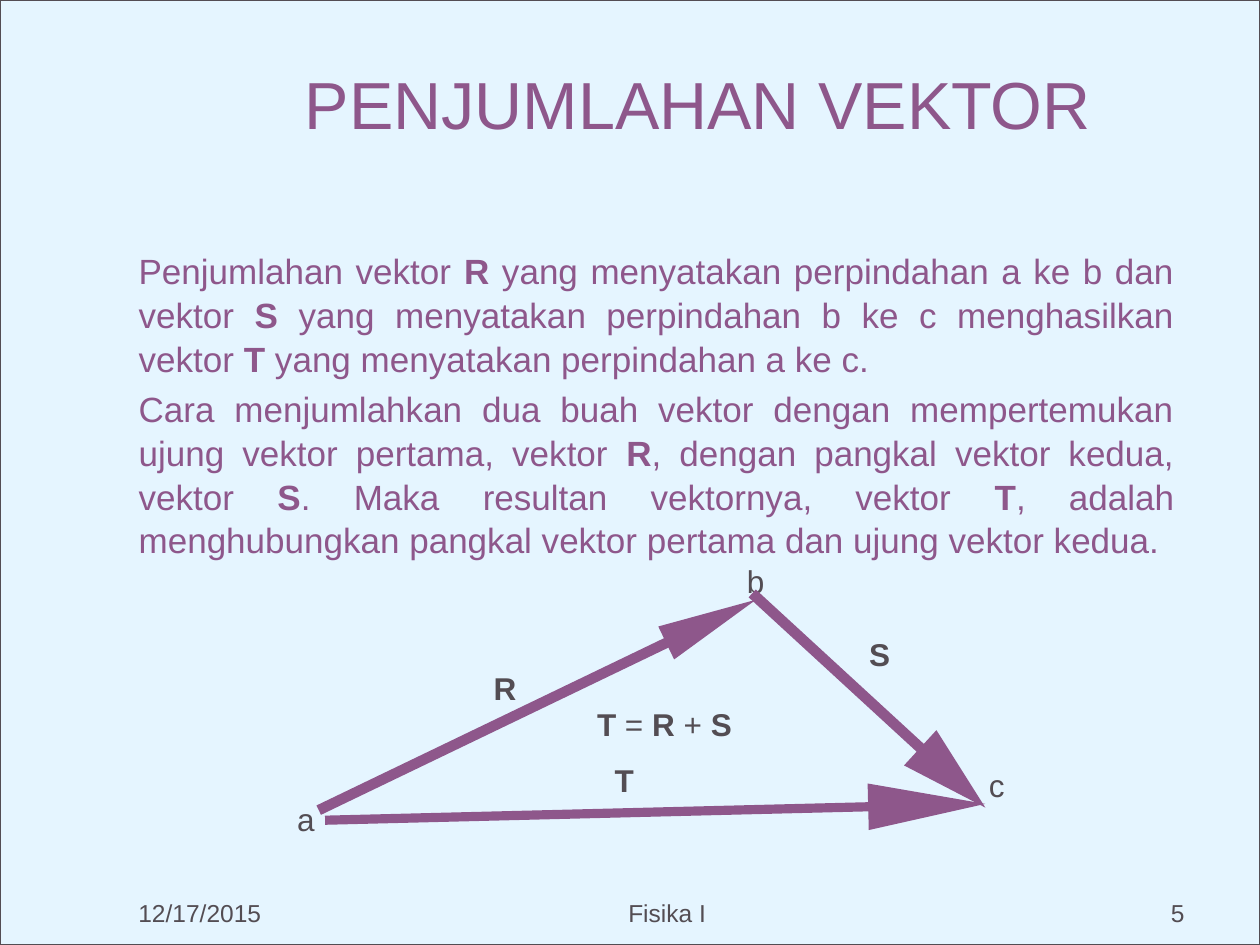
from math import atan2, degrees, hypot

from lxml.etree import SubElement
from pptx import Presentation
from pptx.dml.color import RGBColor
from pptx.enum.shapes import MSO_SHAPE
from pptx.enum.text import MSO_ANCHOR, MSO_AUTO_SIZE, PP_ALIGN
from pptx.oxml.ns import qn
from pptx.util import Inches, Pt


class Theme:
    font = "Arial"
    paper = RGBColor(0xE5, 0xF5, 0xFF)
    ink = RGBColor(0x53, 0x4D, 0x53)
    accent = RGBColor(0x8E, 0x57, 0x8B)
    title, body, label, footer = 38, 20, 18, 14


# Content: a run is (text, bold)
TITLE = [[("PENJUMLAHAN VEKTOR", False)]]
BODY = [
    [("Penjumlahan vektor ", False), ("R", True),
     (" yang menyatakan perpindahan a ke b dan vektor ", False), ("S", True),
     (" yang menyatakan perpindahan b ke c menghasilkan vektor ", False), ("T", True),
     (" yang menyatakan perpindahan a ke c.", False)],
    [("Cara menjumlahkan dua buah vektor dengan mempertemukan ujung vektor pertama, vektor ", False),
     ("R", True), (", dengan pangkal vektor kedua, vektor ", False), ("S", True),
     (". Maka resultan vektornya, vektor ", False), ("T", True),
     (", adalah menghubungkan pangkal vektor pertama dan ujung vektor kedua.", False)],
]
FOOTERS = [  # text, left, width, alignment
    ("12/17/2015", 1, 2.17, PP_ALIGN.LEFT),
    ("Fisika I", 3.67, 3.25, PP_ALIGN.CENTER),
    ("5", 7.42, 2.08, PP_ALIGN.RIGHT),
]
LABELS = [  # runs, left, top, width
    ([("b", False)], 5.83, 4.41, 0.53),
    ([("c", False)], 7.75, 6.03, 0.75),
    ([("a", False)], 2.26, 6.3, 0.59),
    ([("R", True)], 3.82, 5.26, 0.52),
    ([("S", True)], 6.8, 4.99, 0.52),
    ([("T", True)], 4.78, 5.99, 0.52),
    ([("T", True), (" = ", False), ("R", True), (" + ", False), ("S", True)], 4.64, 5.55, 1.84),
]
VECTORS = [  # tail, head, head width, shaft share, head length share
    ((2.53, 6.43), (6.0, 4.76), 0.29, 0.285, 2.724),
    ((5.97, 4.71), (7.82, 6.41), 0.38, 0.222, 1.846),
    ((2.58, 6.51), (7.82, 6.38), 0.37, 0.196, 2.512),
]


def place(shape, left, top, width, height):
    shape.left, shape.top = Inches(left), Inches(top)
    shape.width, shape.height = Inches(width), Inches(height)


def write(shape, paragraphs, size, color, align=PP_ALIGN.LEFT, spacing=1.0, plain=False):
    frame = shape.text_frame
    frame.word_wrap = True
    frame.auto_size = MSO_AUTO_SIZE.NONE
    for index, runs in enumerate(paragraphs):
        para = frame.paragraphs[0] if index == 0 else frame.add_paragraph()
        if plain:  # no bullet, no hanging indent
            properties = para._p.get_or_add_pPr()
            properties.set("marL", "0")
            properties.set("indent", "0")
            SubElement(properties, qn("a:buNone"))
        para.alignment = align
        para.line_spacing = spacing
        para.space_before = Pt(0.2 * size if index else 0)
        for text, bold in runs:
            span = para.add_run()
            span.text = text
            span.font.name = Theme.font
            span.font.size = Pt(size)
            span.font.bold = bold
            span.font.color.rgb = color


def add_text(page, runs, left, top, width, height, size, align=PP_ALIGN.LEFT):
    box = page.shapes.add_textbox(Inches(left), Inches(top), Inches(width), Inches(height))
    write(box, [runs], size, Theme.ink, align)


def add_vector(page, tail, head, thickness, shaft, point):
    run, rise = head[0] - tail[0], head[1] - tail[1]
    length = hypot(run, rise)
    left = (tail[0] + head[0] - length) / 2
    top = (tail[1] + head[1] - thickness) / 2
    arrow = page.shapes.add_shape(MSO_SHAPE.RIGHT_ARROW, Inches(left), Inches(top),
                                  Inches(length), Inches(thickness))
    arrow.rotation = degrees(atan2(rise, run)) % 360
    arrow.adjustments[0], arrow.adjustments[1] = shaft, point
    arrow.shadow.inherit = False
    arrow.fill.solid()
    arrow.fill.fore_color.rgb = Theme.accent
    arrow.line.fill.background()


def main():
    deck = Presentation()
    deck.slide_width, deck.slide_height = Inches(10), Inches(7.5)
    page = deck.slides.add_slide(deck.slide_layouts[1])

    # Framed backdrop, sent behind the placeholders
    backdrop = page.shapes.add_shape(MSO_SHAPE.RECTANGLE, 0, 0, deck.slide_width, deck.slide_height)
    backdrop.shadow.inherit = False
    backdrop.fill.solid()
    backdrop.fill.fore_color.rgb = Theme.paper
    backdrop.line.color.rgb = Theme.ink
    backdrop.line.width = Pt(0.75)
    page.shapes._spTree.insert(2, backdrop._element)

    # Title and body
    title, body = page.shapes.title, page.placeholders[1]
    place(title, 2, 0.19, 7.08, 1.25)
    title.text_frame.vertical_anchor = MSO_ANCHOR.MIDDLE
    write(title, TITLE, Theme.title, Theme.accent, PP_ALIGN.CENTER)
    place(body, 1, 1.92, 8.42, 2.83)
    write(body, BODY, Theme.body, Theme.accent, PP_ALIGN.JUSTIFY, spacing=1.04, plain=True)

    # Footer row
    for text, left, width, align in FOOTERS:
        add_text(page, [(text, False)], left, 7.08, width, 0.25, Theme.footer, align)

    # Vector triangle
    for runs, left, top, width in LABELS:
        add_text(page, runs, left, top, width, 0.37, Theme.label)
    for vector in VECTORS:
        add_vector(page, *vector)

    deck.save("out.pptx")


if __name__ == "__main__":
    main()
